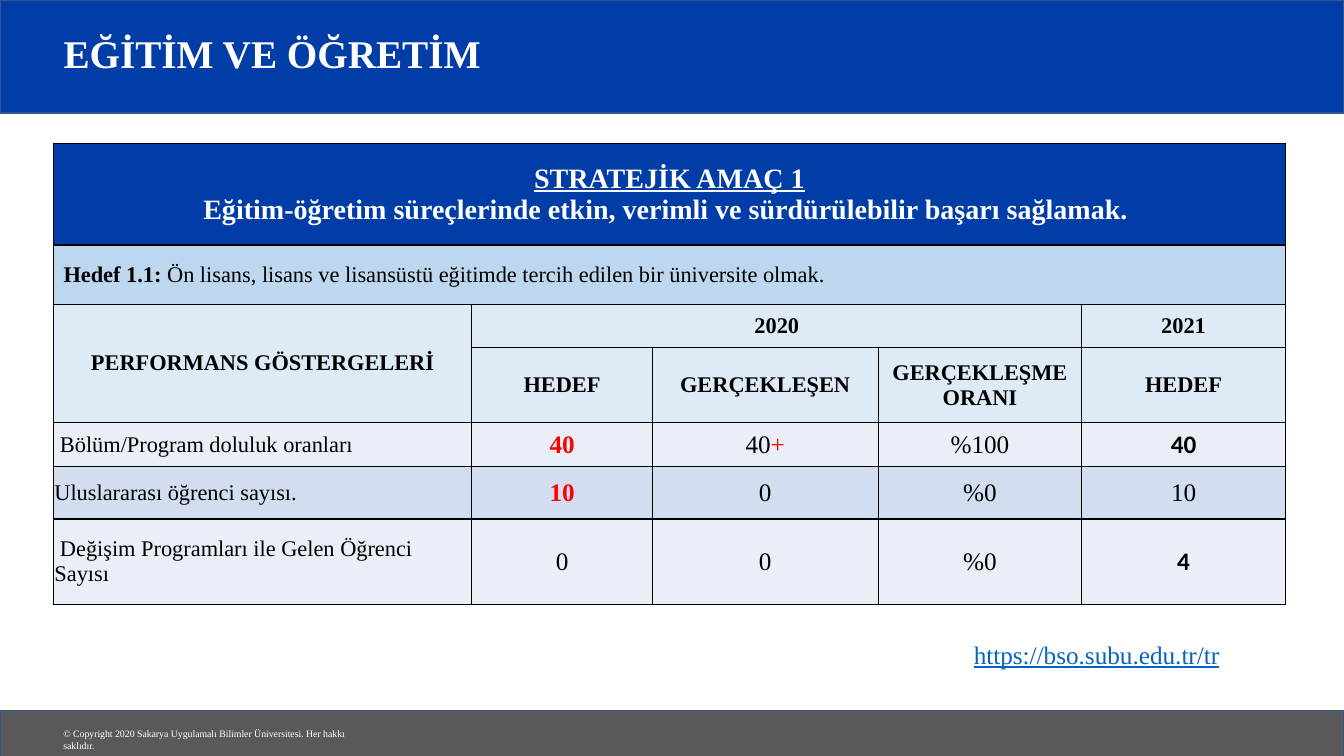
from lxml import etree
from pptx import Presentation
from pptx.dml.color import RGBColor
from pptx.enum.shapes import MSO_SHAPE
from pptx.enum.text import MSO_ANCHOR, PP_ALIGN
from pptx.oxml.ns import qn
from pptx.util import Inches, Pt

RECT = MSO_SHAPE.RECTANGLE
MIDDLE, TOP = MSO_ANCHOR.MIDDLE, MSO_ANCHOR.TOP
LEFT, CENTER = PP_ALIGN.LEFT, PP_ALIGN.CENTER

NAVY = RGBColor(0x00, 0x3D, 0xA6)
EDGE = RGBColor(0x32, 0x54, 0x91)
GRAY = RGBColor(0x59, 0x59, 0x59)
WHITE = RGBColor(0xFF, 0xFF, 0xFF)
BLACK = RGBColor(0x00, 0x00, 0x00)
RED = RGBColor(0xFF, 0x00, 0x00)
LINK = RGBColor(0x05, 0x63, 0xC1)
SKY = RGBColor(0xBD, 0xD7, 0xEE)
PALE = RGBColor(0xDE, 0xEB, 0xF7)
LIGHT = RGBColor(0xEA, 0xEF, 0xF7)
BAND = RGBColor(0xD2, 0xDE, 0xEF)

SERIF, SANS = "Times New Roman", "Calibri"
WIDTH, HEIGHT = 13.33, 7.5
COLS = [4.15, 1.79, 2.24, 2.02, 2.02]
ROWS = [1.01, 0.59, 0.43, 0.74, 0.44, 0.52, 0.85]
BOLD_RED = {"bold": True, "color": RED}
BOLD_SANS = {"bold": True, "font": SANS}
DATA = [
    [" Bölüm/Program doluluk oranları", [("40", BOLD_RED)],
     ["40", ("+", {"color": RED})], ["%100"], [("40", BOLD_SANS)]],
    ["Uluslararası öğrenci sayısı.", [("10", BOLD_RED)], ["0"], ["%0"], ["10"]],
    [" Değişim Programları ile Gelen Öğrenci Sayısı", ["0"], ["0"], ["%0"],
     [("4", BOLD_SANS)]],
]


def write(para, text, size=16, color=BLACK, font=SERIF, bold=False,
          line=False, align=LEFT):
    """Add one run to a paragraph."""
    para.alignment = align
    run = para.add_run()
    run.text = text
    style = run.font
    style.size, style.name = Pt(size), font
    style.bold, style.underline = bold, line
    style.color.rgb = color


def add_bar(slide, left, top, width, height, fill):
    bar = slide.shapes.add_shape(RECT, Inches(left), Inches(top),
                                 Inches(width), Inches(height))
    bar.shadow.inherit = False
    bar.fill.solid()
    bar.fill.fore_color.rgb = fill
    bar.line.color.rgb = EDGE
    bar.line.width = Pt(1)


def add_text(slide, left, top, width, height, text, **style):
    box = slide.shapes.add_textbox(Inches(left), Inches(top),
                                   Inches(width), Inches(height))
    frame = box.text_frame
    frame.word_wrap = True
    frame.vertical_anchor = TOP
    write(frame.paragraphs[0], text, **style)


def add_header(slide, left, top, width, height):
    add_bar(slide, left, top, width, height, NAVY)
    title = slide.shapes.title
    title.left, title.top = Inches(left + 0.53), Inches(top + 0.19)
    title.width, title.height = Inches(11.03), Inches(0.73)
    frame = title.text_frame
    frame.vertical_anchor = MIDDLE
    para = frame.paragraphs[0]
    para.line_spacing = 0.9
    write(para, "EĞİTİM VE ÖĞRETİM", size=28, color=WHITE, bold=True)
    # Bring the title in front of its bar
    title.element.getparent().append(title.element)


def add_footer(slide, left, top, width, height):
    add_bar(slide, left, top, width, height, GRAY)
    add_text(slide, left + 0.53, top + 0.12, 3.29, 0.22,
             "© Copyright 2020 Sakarya Uygulamalı Bilimler Üniversitesi. "
             "Her hakkı saklıdır.", size=7, color=WHITE)


def set_cell(cell, fill, inset=None):
    """Fill and outline a cell, with an optional even inset."""
    cell.fill.solid()
    cell.fill.fore_color.rgb = fill
    cell.vertical_anchor = MIDDLE
    if inset is not None:
        cell.margin_left = cell.margin_right = Inches(inset)
        cell.margin_top = cell.margin_bottom = Inches(inset)
    props = cell._tc.get_or_add_tcPr()
    for place, side in enumerate(("a:lnL", "a:lnR", "a:lnT", "a:lnB")):
        edge = etree.Element(qn(side), w=str(Pt(1)))
        paint = etree.SubElement(edge, qn("a:solidFill"))
        etree.SubElement(paint, qn("a:srgbClr"), val=str(BLACK))
        props.insert(place, edge)


def add_goals(slide, left, top, width, height):
    frame = slide.shapes.add_table(len(ROWS), len(COLS), Inches(left),
                                   Inches(top), Inches(width), Inches(height))
    table = frame.table
    table.first_row = table.horz_banding = False
    for col, size in zip(table.columns, COLS):
        col.width = Inches(size)
    for row, size in zip(table.rows, ROWS):
        row.height = Inches(size)

    # Fills and borders
    fills = [NAVY, SKY, PALE, PALE, LIGHT, BAND, LIGHT]
    for r, fill in enumerate(fills):
        for c in range(len(COLS)):
            inset = None if r < 4 else 0.01 if c in (0, 4) else 0.03
            set_cell(table.cell(r, c), fill, inset)
    for first, last in [((0, 0), (0, 4)), ((1, 0), (1, 4)),
                        ((2, 0), (3, 0)), ((2, 1), (2, 3))]:
        table.cell(*first).merge(table.cell(*last))

    # Aim and target
    aim = table.cell(0, 0).text_frame
    head = {"size": 20, "color": WHITE, "bold": True, "align": CENTER}
    write(aim.paragraphs[0], "STRATEJİK AMAÇ 1", line=True, **head)
    write(aim.add_paragraph(), "Eğitim-öğretim süreçlerinde etkin, verimli ve "
          "sürdürülebilir başarı sağlamak. ", **head)
    target = table.cell(1, 0).text_frame.paragraphs[0]
    write(target, "Hedef 1.1: ", bold=True)
    write(target, "Ön lisans, lisans ve lisansüstü eğitimde tercih edilen "
          "bir üniversite olmak.")

    # Column heads
    heads = {(2, 0): "PERFORMANS GÖSTERGELERİ", (2, 1): "2020", (2, 4): "2021",
             (3, 1): "HEDEF", (3, 2): "GERÇEKLEŞEN",
             (3, 3): "GERÇEKLEŞME ORANI", (3, 4): "HEDEF"}
    for spot, text in heads.items():
        write(table.cell(*spot).text_frame.paragraphs[0], text,
              bold=True, align=CENTER)

    # Indicators
    for r, (label, *values) in enumerate(DATA, 4):
        write(table.cell(r, 0).text_frame.paragraphs[0], label)
        for c, runs in enumerate(values, 1):
            para = table.cell(r, c).text_frame.paragraphs[0]
            for item in runs:
                text, style = (item, {}) if isinstance(item, str) else item
                write(para, text, size=18, align=CENTER, **style)


def main():
    deck = Presentation()
    deck.slide_width, deck.slide_height = Inches(WIDTH), Inches(HEIGHT)
    slide = deck.slides.add_slide(deck.slide_layouts[5])
    add_header(slide, 0, 0, WIDTH, 1.12)
    add_footer(slide, 0, 7.05, WIDTH, 0.46)
    add_goals(slide, 0.53, 1.42, sum(COLS), sum(ROWS))
    add_text(slide, 9.56, 6.29, 2.73, 0.4, "https://bso.subu.edu.tr/tr",
             size=18, color=LINK, line=True)
    deck.save("out.pptx")


if __name__ == "__main__":
    main()
